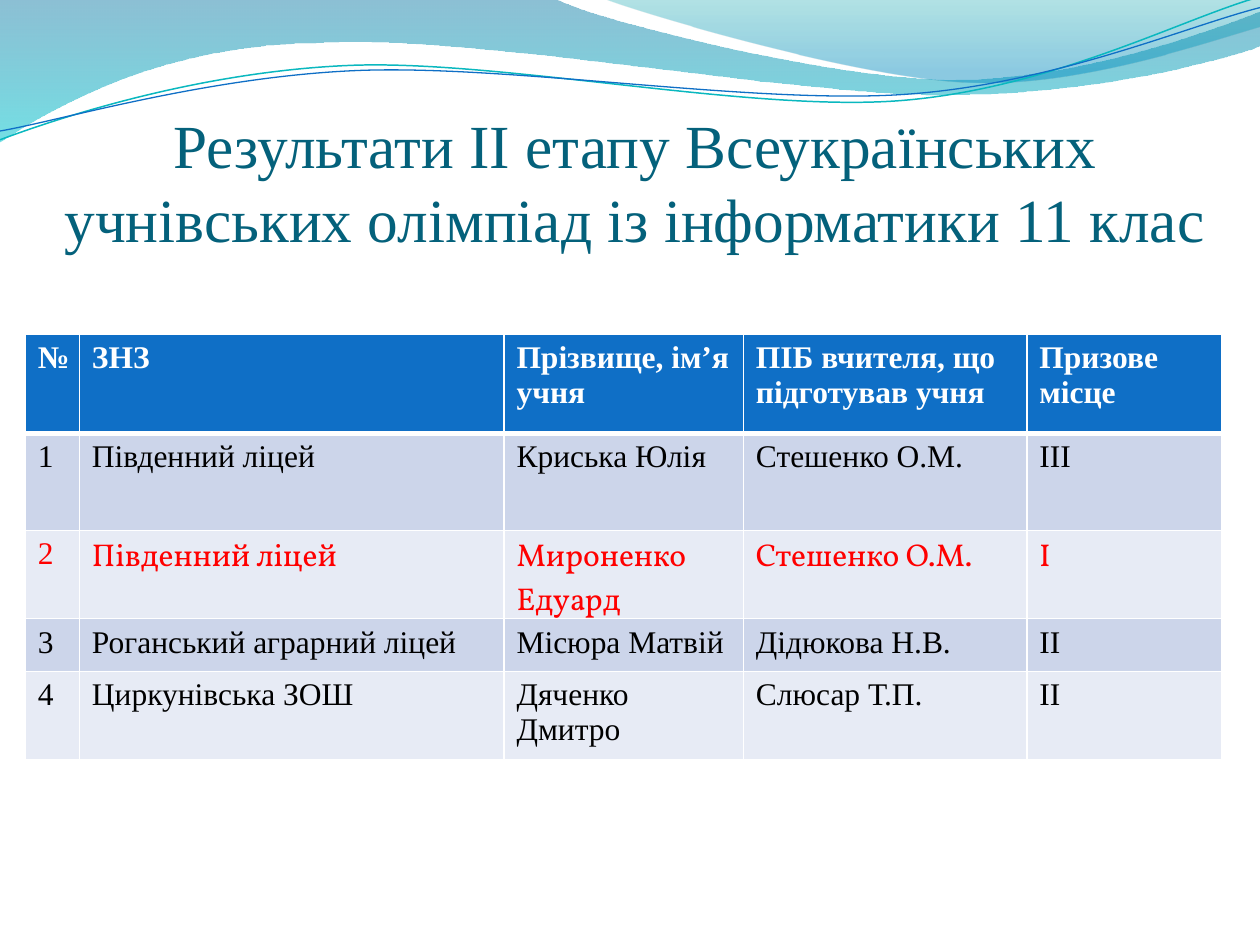
"""Builds a slide with a wave header and a table of olympiad results."""
import math

from lxml import etree
from pptx import Presentation
from pptx import util as u
from pptx.dml.color import RGBColor
from pptx.enum import text
from pptx.oxml.ns import qn

TITLE = "Результати ІІ етапу Всеукраїнських учнівських олімпіад із інформатики 11 клас"
ROWS = [
    ("№", "ЗНЗ", "Прізвище, ім’я учня", "ПІБ вчителя, що підготував учня", "Призове місце"),
    ("1", "Південний ліцей", "Криська Юлія", "Стешенко О.М.", "ІІІ"),
    ("2", "Південний ліцей", "Мироненко Едуард", "Стешенко О.М.", "І"),
    ("3", "Роганський аграрний ліцей", "Місюра Матвій", "Дідюкова Н.В.", "ІІ"),
    ("4", "Циркунівська ЗОШ", "Дяченко Дмитро", "Слюсар Т.П.", "ІІ"),
]
WINNER_ROW = 2
TABLE_AREA = (0.2, 2.65, 9.5, 3.38)
COL_WIDTHS = [0.43, 3.37, 1.9, 2.25, 1.55]
ROW_HEIGHTS = [0.79, 0.77, 0.42, 0.42, 0.35]

THEME = {
    "font": "Times New Roman", "winner_font": "Vollkorn",
    "title_size": 35, "cell_size": 18,
    "title": "04617B", "header": "0F6FC6", "bands": ("E7EBF5", "CCD5EA"),
    "white": "FFFFFF", "black": "000000", "winner": "FF0000",
    "wave_back": [(0, "0074A1", 45), (1, "00C6CF", 55)],
    "wave_front": [(0, "00A1A9", 30), (0.8, "008BBF", 45)],
    "line_teal": ("0AB8BF", 0.85), "line_blue": ("0F6FC6", 0.75),
}

WAVES = [
    {"box": (-0.01, -0.01, 10.02, 1.14), "start": (0, -0.01), "stops": THEME["wave_back"],
     "segments": [(4.4, -0.01), (4.76, 0.17, 6.64, 0.63, 7.58, 0.63),
                  (8.53, 0.63, 9.58, 0.26, 10, 0.09), (10.01, 0.36),
                  (9.83, 0.44, 8.7, 0.76, 7.46, 0.75),
                  (6.22, 0.75, 3.82, 0.28, 2.57, 0.34),
                  (1.29, 0.35, 0.46, 0.83, -0.01, 1.13), (0, -0.01)]},
    {"box": (4.79, -0.01, 5.21, 0.7), "start": (4.79, -0.01), "stops": THEME["wave_front"],
     "segments": [(5.09, 0.11, 6.82, 0.62, 7.69, 0.65),
                  (8.56, 0.69, 9.61, 0.32, 10, 0.21), (10, 0), (4.79, -0.01)]},
    {"box": (-0.02, 0.22, 10.02, 0.71), "start": (0, 1.11), "line": THEME["line_teal"],
     "turn": -2.7,
     "segments": [(0.48, 0.93, 1.58, 0.57, 2.77, 0.52),
                  (3.95, 0.47, 5.93, 0.89, 7.13, 0.8),
                  (8.33, 0.71, 9.38, 0.15, 9.98, -0.02)]},
    {"box": (-0.02, 0.3, 10.03, 0.58), "start": (0, 1.04), "line": THEME["line_blue"],
     "turn": -2.7,
     "segments": [(0.47, 0.96, 1.64, 0.61, 2.83, 0.56),
                  (4.03, 0.51, 5.97, 0.83, 7.17, 0.75),
                  (8.36, 0.67, 9.41, 0.21, 10, 0.06)]},
]


def rgb(value):
    return RGBColor.from_string(value)


def to_local(x, y, box, turn):
    left, top, width, height = box
    dx, dy = x - left - width / 2, y - top - height / 2
    cos, sin = math.cos(math.radians(turn)), math.sin(math.radians(turn))
    return (u.Inches(width / 2 + dx * cos + dy * sin),
            u.Inches(height / 2 - dx * sin + dy * cos))


def curve_path(sp, box, start, segments, turn, closed):
    path = next(sp._element.iter(qn("a:path")))
    for child in list(path):
        path.remove(child)
    path.set("w", str(sp.width))
    path.set("h", str(sp.height))
    commands = [("moveTo", start)]
    commands += [("lnTo" if len(seg) == 2 else "cubicBezTo", seg) for seg in segments]
    for name, seg in commands:
        command = etree.SubElement(path, qn(f"a:{name}"))
        for point in zip(seg[::2], seg[1::2]):
            x, y = to_local(*point, box, turn)
            etree.SubElement(command, qn("a:pt"), x=str(x), y=str(y))
    if closed:
        etree.SubElement(path, qn("a:close"))


def add_wave(slide, box, start, segments, stops=None, line=None, turn=0):
    builder = slide.shapes.build_freeform(*map(u.Inches, start))
    builder.add_line_segments([tuple(map(u.Inches, seg[-2:])) for seg in segments], close=False)
    sp = builder.convert_to_shape()
    sp.left, sp.top, sp.width, sp.height = map(u.Inches, box)
    sp.rotation = turn
    curve_path(sp, box, start, segments, turn, bool(stops))
    sp.shadow.inherit = False
    if line:
        sp.fill.background()
        sp.line.color.rgb = rgb(line[0])
        sp.line.width = u.Pt(line[1])
        return
    sp.fill.gradient()
    sp.fill.gradient_angle = 270
    for stop, (position, color, _) in zip(sp.fill.gradient_stops, stops):
        stop.position = position
        stop.color.rgb = rgb(color)
    for clr, (_, _, alpha) in zip(sp._element.spPr.iter(qn("a:srgbClr")), stops):
        etree.SubElement(clr, qn("a:alpha"), val=str(alpha * 1000))
    sp.line.fill.background()


def write(tf, content, *, size, color, font=THEME["font"], bold=False, align=text.PP_ALIGN.LEFT):
    tf.word_wrap = True
    p = tf.paragraphs[0]
    p.alignment = align
    r = p.add_run()
    r.text = content
    r.font.size, r.font.name, r.font.bold = u.Pt(size), font, bold
    r.font.color.rgb = rgb(color)


def add_borders(cell, **widths):
    tc_pr = cell._tc.get_or_add_tcPr()
    for side in "LRTB":
        ln = etree.SubElement(tc_pr, qn(f"a:ln{side}"), w=str(u.Pt(widths.get(side, 1))))
        fill = etree.SubElement(ln, qn("a:solidFill"))
        etree.SubElement(fill, qn("a:srgbClr"), val=THEME["white"])


def add_title(slide):
    box = slide.shapes.add_textbox(*map(u.Inches, (0.5, 0.77, 9.08, 1.25)))
    tf = box.text_frame
    tf.margin_left = tf.margin_right = tf.margin_bottom = 0
    tf.margin_top = u.Inches(0.05)
    tf.vertical_anchor = text.MSO_ANCHOR.BOTTOM
    write(tf, TITLE, size=THEME["title_size"], color=THEME["title"], align=text.PP_ALIGN.CENTER)


def add_results(slide):
    frame = slide.shapes.add_table(len(ROWS), len(COL_WIDTHS), *map(u.Inches, TABLE_AREA))
    table = frame.table
    for col, width in zip(table.columns, COL_WIDTHS):
        col.width = u.Inches(width)
    for i, (row, height) in enumerate(zip(table.rows, ROW_HEIGHTS)):
        row.height = u.Inches(height)
        header, winner = i == 0, i == WINNER_ROW
        color = THEME["white" if header else "winner" if winner else "black"]
        for j, content in enumerate(ROWS[i]):
            cell = table.cell(i, j)
            add_borders(cell, T=3 if i == 1 else 1, B=3 if header else 1)
            cell.fill.solid()
            cell.fill.fore_color.rgb = rgb(THEME["header"] if header else THEME["bands"][i % 2])
            font = THEME["winner_font" if winner and j else "font"]
            write(cell.text_frame, content, size=THEME["cell_size"], color=color,
                  font=font, bold=header)
    frame.height = u.Inches(TABLE_AREA[3])


def main():
    prs = Presentation()
    prs.slide_width, prs.slide_height = u.Inches(10), u.Inches(7.5)
    slide = prs.slides.add_slide(prs.slide_layouts[6])
    for wave in WAVES:
        add_wave(slide, **wave)
    add_title(slide)
    add_results(slide)
    prs.save("out.pptx")


if __name__ == "__main__":
    main()
